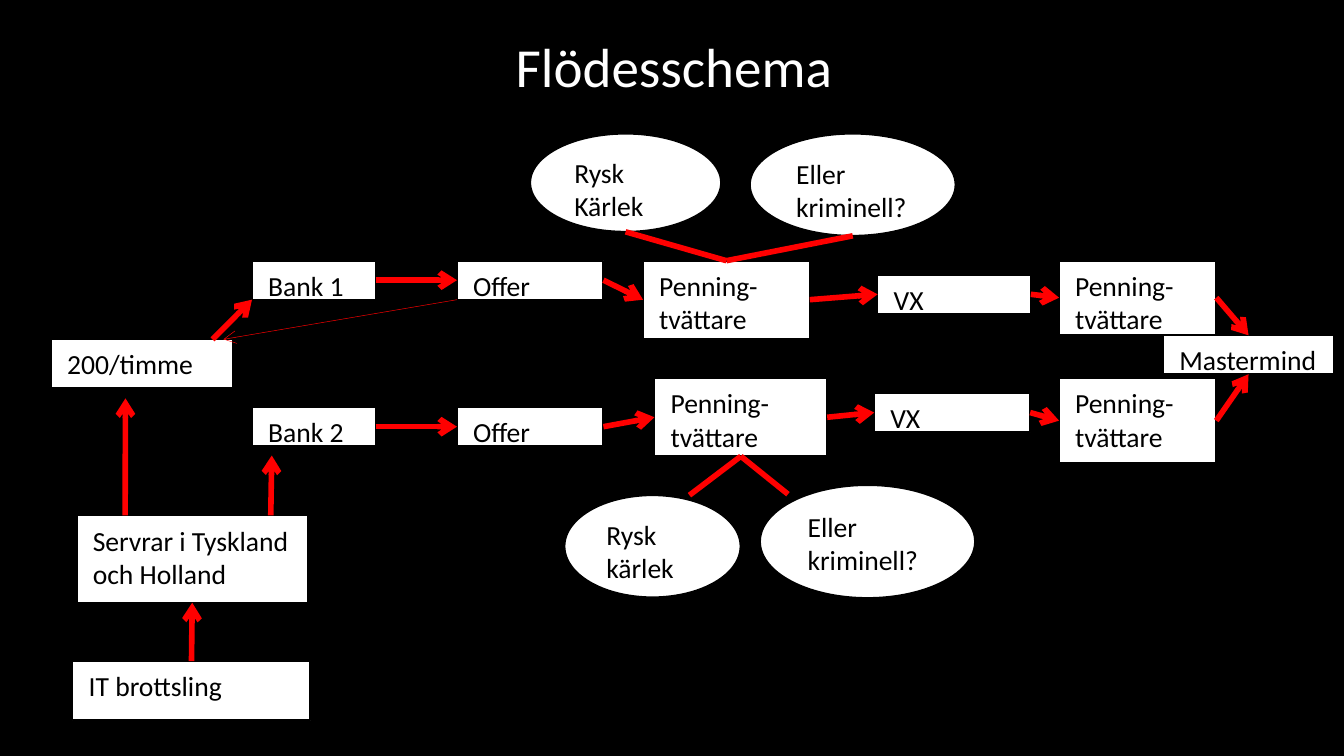
from typing import NamedTuple

from lxml import etree
from pptx import Presentation
from pptx import util as u
from pptx.dml.color import RGBColor
from pptx.enum import shapes, text
from pptx.oxml.ns import qn

BLACK = RGBColor(0, 0, 0)
WHITE = RGBColor(255, 255, 255)
RED = RGBColor(255, 0, 0)
FONT = "Calibri"
WIDE = u.Inches(10)
HIGH = WIDE * 9 // 16
CELL = WIDE / 100
RECT = shapes.MSO_SHAPE.RECTANGLE
OVAL = shapes.MSO_SHAPE.OVAL


class Node(NamedTuple):
    label: str
    col: float
    row: float
    cols: float
    rows: float = 2.9
    form: shapes.MSO_SHAPE = RECT


class Spot(NamedTuple):
    across: float
    down: float


class Link(NamedTuple):
    start: str
    leave: Spot
    end: str
    reach: Spot
    width: float = 3
    arrow: bool = True


TOP, LEFT = Spot(0.5, 0), Spot(0, 0.5)
BASE, RIGHT = Spot(0.5, 1), Spot(1, 0.5)
CORNER = Spot(0, 1)

NODES = {
    "thief": Node("IT brottsling", 5.4, 49.2, 17.7, 4.4),
    "server": Node("Servrar i Tyskland och Holland", 5.7, 38.35, 17.2, 6.5),
    "bank1": Node("Bank 1", 18.75, 19.4, 9.2),
    "bank2": Node("Bank 2", 18.75, 30.3, 9.2),
    "rate": Node("200/timme", 3.8, 25.25, 13.5, 3.6),
    "victim1": Node("Offer", 34, 19.4, 10.9),
    "victim2": Node("Offer", 34, 30.3, 10.9),
    "mule1": Node("Penning-tvättare", 47.85, 19.4, 12.4, 5.8),
    "mule2": Node("Penning- tvättare", 48.7, 28.15, 12.85, 5.8),
    "wire1": Node("VX", 65.3, 20.45, 11.4),
    "wire2": Node("VX", 65.05, 29.25, 11.6),
    "last1": Node("Penning- tvättare", 78.8, 19.4, 11.7, 5.5),
    "last2": Node("Penning- tvättare", 78.8, 28.15, 11.7, 6.3),
    "love1": Node("Rysk Kärlek", 39.45, 9.95, 14.2, 7.3, OVAL),
    "crook1": Node("Eller kriminell?", 55.8, 9.95, 15.3, 7.6, OVAL),
    "love2": Node("Rysk kärlek", 42, 36.85, 13.1, 7.6, OVAL),
    "crook2": Node("Eller kriminell?", 56.55, 36.1, 16, 8.4, OVAL),
    "master": Node("Mastermind", 86.55, 24.95, 12.7),
}

CHAIN = ("bank", "victim", "mule", "wire", "last")
LINKS = [
    Link("mule2", BASE, "love2", Spot(0.71, 0), arrow=False),
    Link("mule2", BASE, "crook2", Spot(0.13, 0.08), arrow=False),
    Link("love1", BASE, "mule1", TOP, arrow=False),
    Link("crook1", BASE, "mule1", TOP, arrow=False),
    Link("thief", TOP, "server", BASE),
    Link("server", Spot(0.84, 0), "bank2", Spot(0.16, 1.24)),
    Link("server", Spot(0.21, 0), "rate", Spot(0.41, 1.22)),
    Link("rate", Spot(0.89, 0), "bank1", CORNER),
    Link("victim1", CORNER, "rate", Spot(0.95, 0), 0.25),
    Link("last1", RIGHT, "master", TOP),
    Link("last2", RIGHT, "master", BASE),
] + [
    Link(f"{a}{lane}", RIGHT, f"{b}{lane}", LEFT)
    for lane in (1, 2)
    for a, b in zip(CHAIN, CHAIN[1:])
]


def grid(count: float) -> int:
    return round(count * CELL)


def point(name: str, spot: Spot) -> tuple[int, int]:
    node = NODES[name]
    return (grid(node.col + node.cols * spot.across),
            grid(node.row + node.rows * spot.down))


def style(para, size: float, color: RGBColor, align) -> None:
    para.alignment = align
    para.font.name = FONT
    para.font.size = u.Pt(size)
    para.font.color.rgb = color


def draw_node(slide, node: Node) -> None:
    box = slide.shapes.add_shape(
        node.form, grid(node.col), grid(node.row), grid(node.cols), grid(node.rows))
    box.shadow.inherit = False
    box.fill.solid()
    box.fill.fore_color.rgb = WHITE
    box.line.color.rgb = BLACK
    box.line.width = u.Pt(1)
    frame = box.text_frame
    frame.word_wrap = True
    frame.vertical_anchor = text.MSO_ANCHOR.TOP
    frame.margin_left = frame.margin_right = u.Inches(0.12)
    frame.margin_top = frame.margin_bottom = u.Inches(0.06)
    frame.text = node.label
    style(frame.paragraphs[0], 14.8, BLACK, text.PP_ALIGN.LEFT)


def draw_link(slide, link: Link) -> None:
    line = slide.shapes.add_connector(
        shapes.MSO_CONNECTOR.STRAIGHT,
        *point(link.start, link.leave), *point(link.end, link.reach))
    line.line.color.rgb = RED
    line.line.width = u.Pt(link.width)
    if link.arrow:
        etree.SubElement(line.line._get_or_add_ln(), qn("a:tailEnd"), type="arrow")
    etree.SubElement(line._element.spPr, qn("a:effectLst"))


def draw_title(slide) -> None:
    title = slide.shapes.title
    title.left, title.top = grid(7.65), grid(-0.6)
    title.width, title.height = grid(85), grid(10.9)
    title.text_frame.text = "Flödesschema"
    title.text_frame.vertical_anchor = text.MSO_ANCHOR.MIDDLE
    style(title.text_frame.paragraphs[0], 29.5, WHITE, text.PP_ALIGN.CENTER)


def main() -> None:
    deck = Presentation()
    deck.slide_width, deck.slide_height = WIDE, HIGH
    slide = deck.slides.add_slide(deck.slide_layouts[0])
    slide.background.fill.solid()
    slide.background.fill.fore_color.rgb = BLACK
    sub = slide.placeholders[1].element
    sub.getparent().remove(sub)
    draw_title(slide)
    for node in NODES.values():
        draw_node(slide, node)
    for link in LINKS:
        draw_link(slide, link)
    deck.save("out.pptx")


if __name__ == "__main__":
    main()
